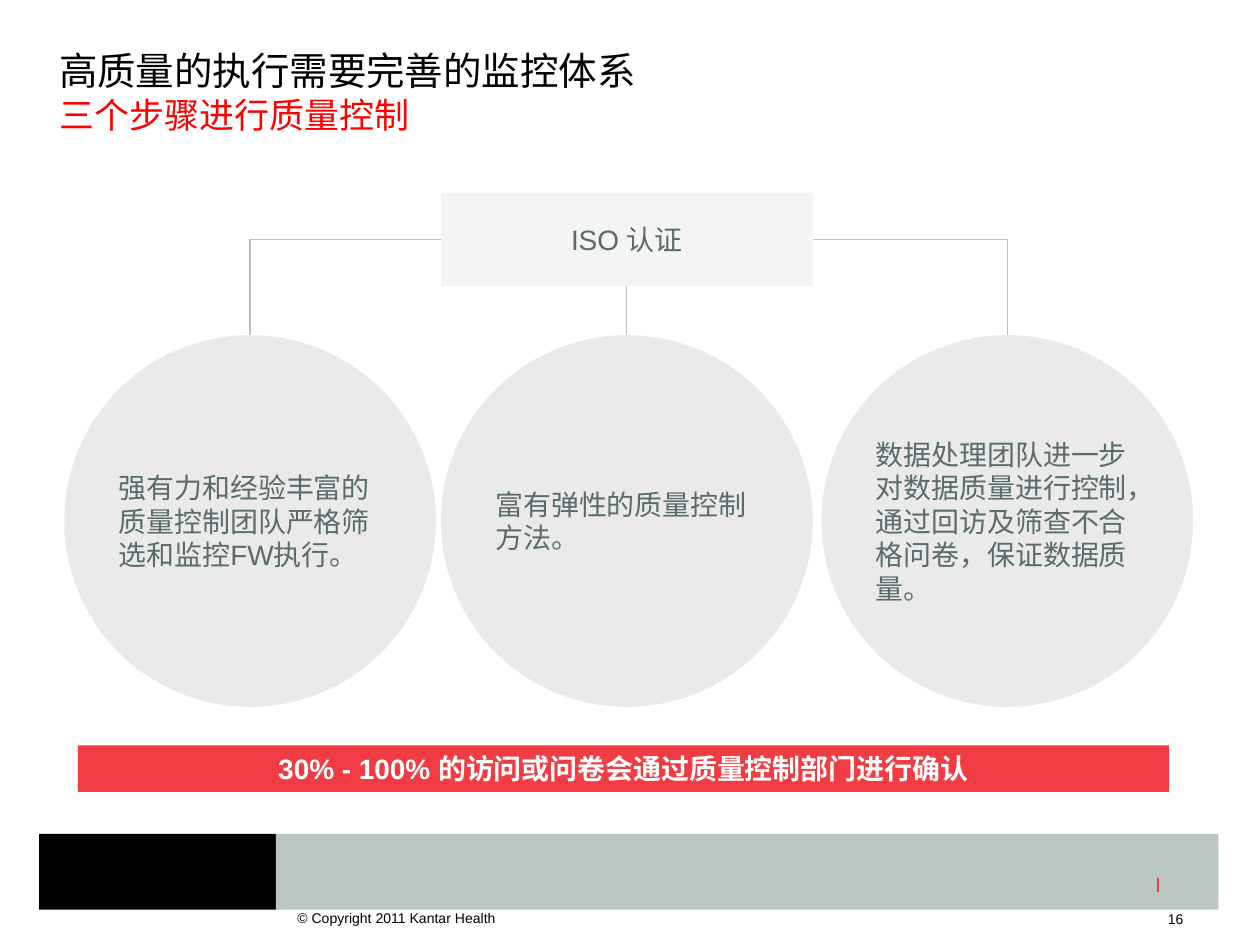
from lxml import etree
from pptx import Presentation
from pptx.dml.color import RGBColor
from pptx.enum.shapes import MSO_CONNECTOR, MSO_SHAPE
from pptx.enum.text import MSO_ANCHOR, PP_ALIGN
from pptx.oxml.ns import qn
from pptx.util import Pt

RECT, OVAL = MSO_SHAPE.RECTANGLE, MSO_SHAPE.OVAL
LINE, ELBOW = MSO_CONNECTOR.STRAIGHT, MSO_CONNECTOR.ELBOW
TOP, MIDDLE = MSO_ANCHOR.TOP, MSO_ANCHOR.MIDDLE
LEFT, CENTER = PP_ALIGN.LEFT, PP_ALIGN.CENTER

COLORS = {
    "black": "000000", "white": "FFFFFF", "red": "F03C42", "accent": "FF0000",
    "band": "BAC7C3", "disc": "EAEAEA", "text": "586C6B", "wire": "BFBFBF",
}

DISC = 212.4
DISC_TOP = 191.5
BOX = (252, 110.2, DISC, 53.2)
STEPS = [
    (36.7, "强有力和经验丰富的质量控制团队严格筛选和监控FW执行。"),
    (252, "富有弹性的质量控制方法。"),
    (469.4, "数据处理团队进一步对数据质量进行控制，通过回访及筛查不合格问卷，保证数据质量。"),
]


def color(name):
    return RGBColor.from_string(COLORS[name])


def write(shape, runs, align=LEFT, anchor=MIDDLE, bold=False):
    """Fill a shape with lines of (text, size, colour)."""
    frame = shape.text_frame
    form = {"word_wrap": True, "vertical_anchor": anchor, "margin_left": 0,
            "margin_right": 0, "margin_top": 0, "margin_bottom": 0}
    for key, value in form.items():
        setattr(frame, key, value)
    para = frame.paragraphs[0]
    para.alignment = align
    for i, (text, size, tint) in enumerate(runs):
        if i:
            para.add_line_break()
        run = para.add_run()
        run.text = text
        for key, value in {"name": "Arial", "size": Pt(size), "bold": bold}.items():
            setattr(run.font, key, value)
        run.font.color.rgb = color(tint)


def add_label(slide, area, runs, anchor=TOP):
    write(slide.shapes.add_textbox(*map(Pt, area)), runs, anchor=anchor)


def add_block(slide, kind, area, fill, alpha=None):
    shape = slide.shapes.add_shape(kind, *map(Pt, area))
    shape.shadow.inherit = False
    shape.fill.solid()
    shape.fill.fore_color.rgb = color(fill)
    shape.line.fill.background()
    if alpha:
        tint = shape.fill._xPr.find(".//" + qn("a:srgbClr"))
        etree.SubElement(tint, qn("a:alpha")).set("val", str(alpha * 1000))
    return shape


def add_wire(slide, kind, ends, tint="wire", width=0.75):
    wire = slide.shapes.add_connector(kind, *map(Pt, ends))
    wire.line.color.rgb = color(tint)
    wire.line.width = Pt(width)
    props = wire._element.spPr
    etree.SubElement(props, qn("a:effectLst"))
    if kind == ELBOW:  # a single bend
        props.find(qn("a:prstGeom")).set("prst", "bentConnector2")


def add_band(slide):
    add_block(slide, RECT, (22.3, 476.6, 135.4, 43.2), "black")
    add_block(slide, RECT, (157.7, 476.6, 538.5, 43.2), "band")
    add_wire(slide, LINE, (661.7, 501.8, 661.7, 509.8), "red", 1)


def add_tree(slide):
    left, top, width, height = BOX
    mid = top + height / 2
    # Steps
    for x, text in STEPS:
        disc = add_block(slide, OVAL, (x, DISC_TOP, DISC, DISC), "disc")
        write(disc, [(text, 16, "text")])
    # Root
    root = add_block(slide, RECT, BOX, "disc", 50)
    write(root, [("ISO 认证", 16, "text")], CENTER)
    # Links
    first, second, third = [x + DISC / 2 for x, _ in STEPS]
    add_wire(slide, ELBOW, (left, mid, first, DISC_TOP))
    add_wire(slide, ELBOW, (left + width, mid, third, DISC_TOP))
    add_wire(slide, LINE, (second, top + height, second, DISC_TOP))


def main():
    deck = Presentation()
    deck.slide_width, deck.slide_height = Pt(720), Pt(540)
    slide = deck.slides.add_slide(deck.slide_layouts[6])
    add_band(slide)
    # Title
    add_label(slide, (33.8, 23.8, 657.4, 56.9),
              [("高质量的执行需要完善的监控体系", 22, "black"),
               ("三个步骤进行质量控制", 20, "accent")], MIDDLE)
    add_tree(slide)
    # Key message
    bar = add_block(slide, RECT, (44.6, 426, 623.5, 26.6), "red")
    write(bar, [("30% - 100% 的访问或问卷会通过质量控制部门进行确认", 16, "white")],
          CENTER, bold=True)
    # Footer
    add_label(slide, (667.4, 520.5, 28.1, 14.4), [("16", 8, "black")])
    add_label(slide, (169.9, 520, 198, 14.4),
              [("© Copyright 2011 Kantar Health", 8, "black")])
    deck.save("out.pptx")


if __name__ == "__main__":
    main()
